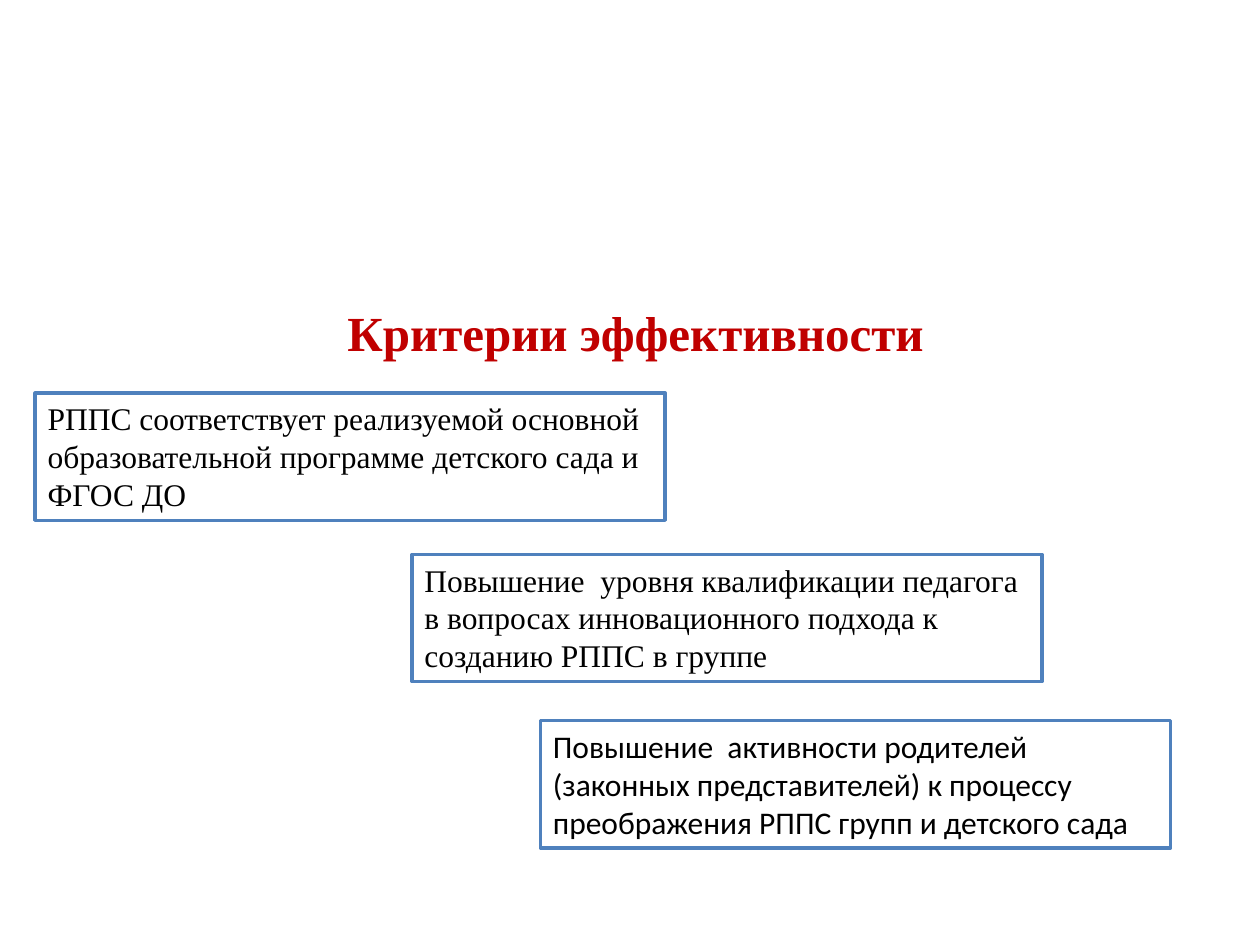
from dataclasses import dataclass

from pptx import Presentation
from pptx.dml.color import RGBColor
from pptx.enum.shapes import MSO_SHAPE
from pptx.enum.text import MSO_ANCHOR, PP_ALIGN
from pptx.slide import Slide
from pptx.text.text import TextFrame
from pptx.util import Inches, Pt

COLORS = {"title": "C00000", "text": "000000", "fill": "FFFFFF", "border": "4F81BD"}
SERIF = "Times New Roman"
SANS = "Calibri"
BOX_WIDTH, BOX_HEIGHT = 5, 1.01


@dataclass
class Criterion:
    left: float
    top: float
    text: str
    font: str = SERIF


CRITERIA = [
    Criterion(0.28, 3.12, "РППС соответствует реализуемой основной образовательной "
              "программе детского сада и ФГОС ДО"),
    Criterion(3.27, 4.4, "Повышение  уровня квалификации педагога в вопросах "
              "инновационного подхода к созданию РППС в группе"),
    Criterion(4.29, 5.72, "Повышение  активности родителей (законных представителей) "
              "к процессу преображения РППС групп и детского сада", SANS),
]


def color(name: str) -> RGBColor:
    return RGBColor.from_string(COLORS[name])


def write(frame: TextFrame, text: str, font: str, size: int, color_name: str,
          align: PP_ALIGN, anchor: MSO_ANCHOR, bold: bool = False) -> None:
    frame.word_wrap = True
    frame.vertical_anchor = anchor
    paragraph = frame.paragraphs[0]
    paragraph.alignment = align
    run = paragraph.add_run()
    run.text = text
    run.font.name = font
    run.font.size = Pt(size)
    run.font.bold = bold
    run.font.color.rgb = color(color_name)


def add_title(slide: Slide, text: str) -> None:
    box = slide.shapes.add_textbox(Inches(1.69), Inches(2.33), Inches(6.61), Inches(0.61))
    write(box.text_frame, text, SERIF, 28, "title",
          PP_ALIGN.CENTER, MSO_ANCHOR.MIDDLE, bold=True)


def add_criterion(slide: Slide, criterion: Criterion) -> None:
    shape = slide.shapes.add_shape(
        MSO_SHAPE.RECTANGLE, Inches(criterion.left), Inches(criterion.top),
        Inches(BOX_WIDTH), Inches(BOX_HEIGHT))
    shape.shadow.inherit = False
    shape.fill.solid()
    shape.fill.fore_color.rgb = color("fill")
    shape.line.color.rgb = color("border")
    shape.line.width = Pt(2)
    write(shape.text_frame, criterion.text, criterion.font, 18, "text",
          PP_ALIGN.LEFT, MSO_ANCHOR.TOP)


def main() -> None:
    presentation = Presentation()
    presentation.slide_width = Inches(10)
    presentation.slide_height = Inches(7.5)
    slide = presentation.slides.add_slide(presentation.slide_layouts[6])
    add_title(slide, " Критерии эффективности")
    for criterion in CRITERIA:
        add_criterion(slide, criterion)
    presentation.save("out.pptx")


if __name__ == "__main__":
    main()
